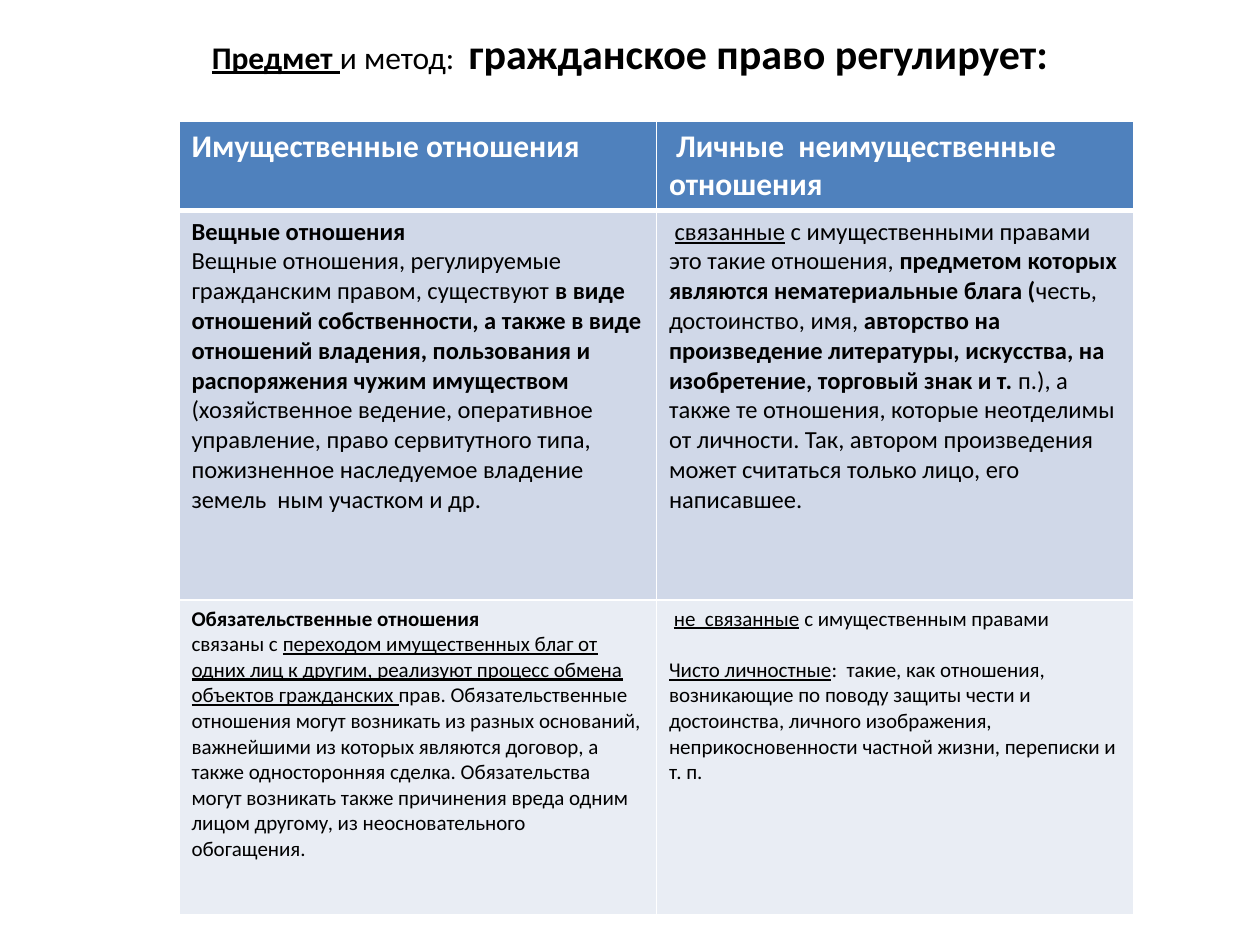
from dataclasses import dataclass

import lxml.etree
import pptx
import pptx.dml.color
import pptx.enum.text
import pptx.oxml.ns
import pptx.util

Inches = pptx.util.Inches
Pt = pptx.util.Pt


@dataclass(frozen=True)
class Theme:
    font: str = "Calibri"
    ink: str = "000000"
    paper: str = "FFFFFF"
    row_fills: tuple = ("4F81BD", "D0D8E8", "E9EDF4")
    row_inks: tuple = ("FFFFFF", "000000", "000000")
    row_sizes: tuple = (18, 14, 12)
    title_size: int = 18
    title_accent_size: int = 24
    rule: int = 1
    header_rule: int = 3
    gap: float = 14.65


@dataclass(frozen=True)
class Run:
    text: str
    bold: bool = False
    underline: bool = False
    size: int = 0


def bold(text):
    return Run(text, bold=True)


def underlined(text):
    return Run(text, underline=True)


class SlideBuilder:
    def __init__(self, deck, theme):
        self.theme = theme
        self.slide = deck.slides.add_slide(deck.slide_layouts[5])

    def add_runs(self, paragraph, runs, size, color):
        for item in runs:
            run = paragraph.add_run()
            run.text = item.text
            font = run.font
            font.name = self.theme.font
            font.size = Pt(item.size or size)
            font.bold = item.bold
            font.underline = item.underline
            font.color.rgb = pptx.dml.color.RGBColor.from_string(color)

    def title(self, runs, left, top, width, height):
        heading = self.slide.shapes.title
        heading.left, heading.top = Inches(left), Inches(top)
        heading.width, heading.height = Inches(width), Inches(height)
        heading.text_frame.vertical_anchor = pptx.enum.text.MSO_ANCHOR.MIDDLE
        paragraph = heading.text_frame.paragraphs[0]
        paragraph.alignment = pptx.enum.text.PP_ALIGN.CENTER
        self.add_runs(paragraph, runs, self.theme.title_size, self.theme.ink)

    def borders(self, cell, row):
        qn = pptx.oxml.ns.qn
        widths = {side: self.theme.rule for side in "LRTB"}
        if row == 0:
            widths["B"] = self.theme.header_rule
        elif row == 1:
            widths["T"] = self.theme.header_rule
        properties = cell._tc.get_or_add_tcPr()
        for side, width in widths.items():
            line = lxml.etree.SubElement(properties, qn(f"a:ln{side}"), w=str(Pt(width)))
            fill = lxml.etree.SubElement(line, qn("a:solidFill"))
            lxml.etree.SubElement(fill, qn("a:srgbClr"), val=self.theme.paper)

    def cell(self, cell, row, paragraphs, gap_before):
        self.borders(cell, row)
        cell.fill.solid()
        cell.fill.fore_color.rgb = pptx.dml.color.RGBColor.from_string(self.theme.row_fills[row])
        frame = cell.text_frame
        for index, runs in enumerate(paragraphs):
            paragraph = frame.add_paragraph() if index else frame.paragraphs[0]
            if index and gap_before:
                paragraph.space_before = Pt(self.theme.gap)
            self.add_runs(paragraph, runs, self.theme.row_sizes[row], self.theme.row_inks[row])

    def table(self, rows, left, top, column_width, heights, spaced):
        columns = len(rows[0])
        table = self.slide.shapes.add_table(
            len(rows), columns, Inches(left), Inches(top),
            Inches(column_width * columns), Inches(sum(heights)),
        ).table
        for column in table.columns:
            column.width = Inches(column_width)
        for row, (height, contents) in enumerate(zip(heights, rows)):
            table.rows[row].height = Inches(height)
            for column, paragraphs in enumerate(contents):
                self.cell(table.cell(row, column), row, paragraphs, (row, column) in spaced)


HEADERS = [
    [[bold("Имущественные отношения")]],
    [[bold(" Личные  неимущественные  отношения")]],
]
PROPERTY_RIGHTS = [
    [bold("Вещные отношения")],
    [
        Run("Вещные отношения, регулируемые гражданским правом, существуют "),
        bold("в виде отношений собственности, а также в виде отношений владения, "
             "пользования и распоряжения чужим имуществом "),
        Run("(хозяйственное ведение, оперативное управление, право сервитутного типа, "
            "пожизненное наследуемое владение земель  ным участком и др."),
    ],
]
RELATED_RIGHTS = [
    [Run(" "), underlined("связанные"), Run(" с имущественными правами")],
    [
        Run("это такие отношения, "),
        bold("предметом которых являются нематериальные блага ("),
        Run("честь, достоинство, имя, "),
        bold("авторство на произведение литературы, искусства, на изобретение, "
             "торговый знак и т. "),
        Run("п.), а также те отношения, которые неотделимы от личности. Так, автором "
            "произведения может считаться только лицо, его написавшее."),
    ],
]
OBLIGATIONS = [
    [bold("Обязательственные отношения")],
    [
        Run("связаны с "),
        underlined("переходом имущественных благ от одних лиц к другим, реализуют "
                   "процесс обмена объектов гражданских "),
        Run("прав. Обязательственные отношения могут возникать из разных оснований, "
            "важнейшими из которых являются договор, а также односторонняя сделка. "
            "Обязательства могут возникать также причинения вреда одним лицом другому, "
            "из неосновательного обогащения."),
    ],
]
UNRELATED_RIGHTS = [
    [Run(" "), underlined("не  связанные"), Run(" с имущественным правами")],
    [
        underlined("Чисто личностные"),
        Run(":  такие, как отношения, возникающие по поводу защиты чести и достоинства, "
            "личного изображения, неприкосновенности частной жизни, переписки и т. п."),
    ],
]


def main():
    deck = pptx.Presentation()
    deck.slide_width, deck.slide_height = Inches(10), Inches(7.5)
    theme = Theme()
    builder = SlideBuilder(deck, theme)
    builder.title(
        [
            Run("Предмет ", bold=True, underline=True),
            Run("и метод:  "),
            Run("гражданское право регулирует:", bold=True, size=theme.title_accent_size),
        ],
        0.5, 0, 9, 0.83,
    )
    builder.table(
        [HEADERS, [PROPERTY_RIGHTS, RELATED_RIGHTS], [OBLIGATIONS, UNRELATED_RIGHTS]],
        left=1.42, top=0.96, column_width=3.79, heights=[0.7, 3.09, 2.5],
        spaced={(2, 1)},
    )
    deck.save("out.pptx")


if __name__ == "__main__":
    main()
